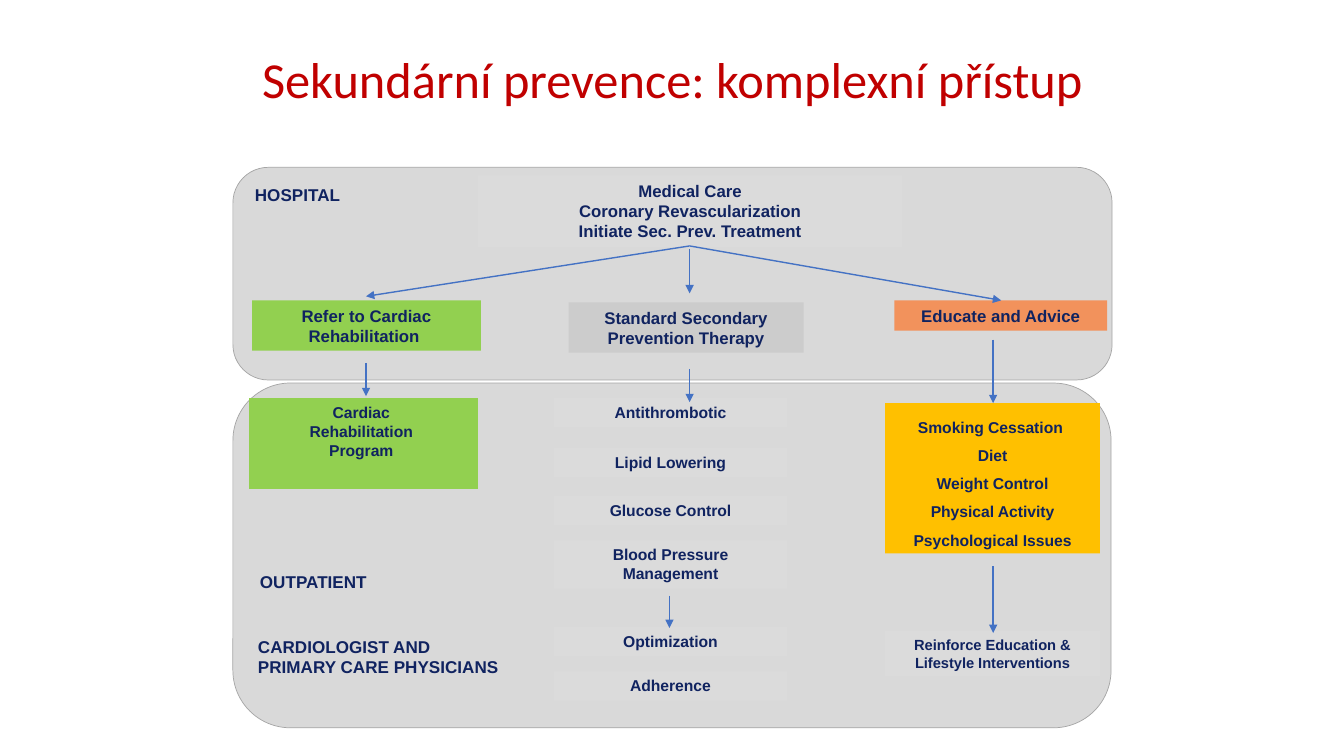
from lxml import etree
from pptx import Presentation
from pptx.dml.color import RGBColor
from pptx.enum.shapes import MSO_CONNECTOR, MSO_SHAPE
from pptx.enum.text import MSO_ANCHOR, PP_ALIGN
from pptx.oxml.ns import qn
from pptx.util import Pt

PX = 9144  # 100 px to the inch
COLORS = {
    "title": "C00000", "text": "102360", "arrow": "4472C4",
    "panel": "D9D9D9", "outline": "A5A5A5", "pale": "DBDBDB",
    "grey": "CCCCCC", "green": "92D050", "orange": "F2925C", "gold": "FFC000",
}


def rgb(name):
    return RGBColor.from_string(COLORS[name])


class Deck:
    def __init__(self, width, height):
        self.prs = Presentation()
        self.prs.slide_width, self.prs.slide_height = width * PX, height * PX
        self.s = self.prs.slides.add_slide(self.prs.slide_layouts[6])

    def set_text(self, sp, text, size, color="text", font="Arial", bold=True,
                 align=PP_ALIGN.CENTER, anchor=MSO_ANCHOR.TOP, spacing=1.0):
        tf = sp.text_frame
        tf.word_wrap, tf.vertical_anchor = True, anchor
        style = {"size": Pt(size), "name": font, "bold": bold}
        for i, line in enumerate(text.split("\n")):
            p = tf.paragraphs[0] if i == 0 else tf.add_paragraph()
            p.alignment, p.line_spacing = align, spacing
            r = p.add_run()
            r.text = line
            for key, value in style.items():
                setattr(r.font, key, value)
            r.font.color.rgb = rgb(color)

    def shape(self, kind, box, fill):
        sp = self.s.shapes.add_shape(kind, *(v * PX for v in box))
        sp.shadow.inherit = False
        sp.fill.solid()
        sp.fill.fore_color.rgb = rgb(fill)
        return sp

    def panel(self, *box):
        sp = self.shape(MSO_SHAPE.ROUNDED_RECTANGLE, box, "panel")
        sp.line.color.rgb = rgb("outline")
        sp.line.width = Pt(0.5)

    def box(self, box, fill, text, size=11.2, **style):
        sp = self.shape(MSO_SHAPE.RECTANGLE, box, fill)
        sp.line.fill.background()
        self.set_text(sp, text, size, **style)

    def label(self, box, text, size=12.2, **style):
        sp = self.s.shapes.add_textbox(*(v * PX for v in box))
        self.set_text(sp, text, size, **style)

    def arrow(self, *ends):
        c = self.s.shapes.add_connector(MSO_CONNECTOR.STRAIGHT, *(v * PX for v in ends))
        c.line.color.rgb = rgb("arrow")
        c.line.width = Pt(1)
        props = c.element.spPr
        etree.SubElement(props.find(qn("a:ln")), qn("a:tailEnd"), type="triangle")
        etree.SubElement(props, qn("a:effectLst"))


def main():
    deck = Deck(1333, 750)
    deck.label((92, 40, 1150, 84), "Sekundární prevence: komplexní přístup", 36,
               color="title", font="Calibri", bold=False,
               anchor=MSO_ANCHOR.MIDDLE, spacing=0.9)

    # Outpatient and hospital panels
    deck.panel(231, 380, 871, 342)
    deck.panel(231, 166, 872, 211)

    # Hospital steps
    deck.box((474, 174, 421, 71), "pale",
             "Medical Care\nCoronary Revascularization\nInitiate Sec. Prev. Treatment", 12)
    deck.box((250, 298, 227, 50), "green", "Refer to Cardiac Rehabilitation ", 12)
    deck.box((564, 300, 233, 50), "grey", "Standard Secondary Prevention Therapy", 12)
    deck.box((887, 298, 211, 30), "orange", "Educate and Advice", 12)

    # Rehabilitation and education
    deck.box((247, 395, 227, 90), "green", "Cardiac \nRehabilitation \nProgram ")
    deck.box((878, 400, 213, 149), "gold",
             "Smoking Cessation \nDiet\nWeight Control\nPhysical Activity\n"
             "Psychological Issues", spacing=1.5)
    deck.box((878, 626, 213, 45), "pale",
             "Reinforce Education & Lifestyle Interventions", 10.5)

    # Prevention therapy column
    for top, height, therapy in [
        (395, 29, "Antithrombotic"), (444, 29, "Lipid Lowering"),
        (492, 29, "Glucose Control"), (536, 48, "Blood Pressure Management"),
        (622, 29, "Optimization"), (666, 29, "Adherence"),
    ]:
        deck.box((549, top, 232, height), "pale", therapy)

    # Care setting labels
    for box, text in [
        ((243, 178, 126, 31), "HOSPITAL"),
        ((248, 562, 152, 31), "OUTPATIENT"),
        ((246, 626, 311, 51), "CARDIOLOGIST AND\nPRIMARY CARE PHYSICIANS"),
    ]:
        deck.label(box, text, align=PP_ALIGN.LEFT)

    # Branches from medical care, then downward steps
    deck.arrow(684, 244, 363, 294)
    deck.arrow(684, 244, 993, 298)
    for x, top, bottom in [
        (684, 247, 291), (363, 360, 393), (684, 366, 399),
        (985, 337, 400), (664, 591, 623), (985, 562, 628),
    ]:
        deck.arrow(x, top, x, bottom)

    deck.prs.save("out.pptx")


if __name__ == "__main__":
    main()
